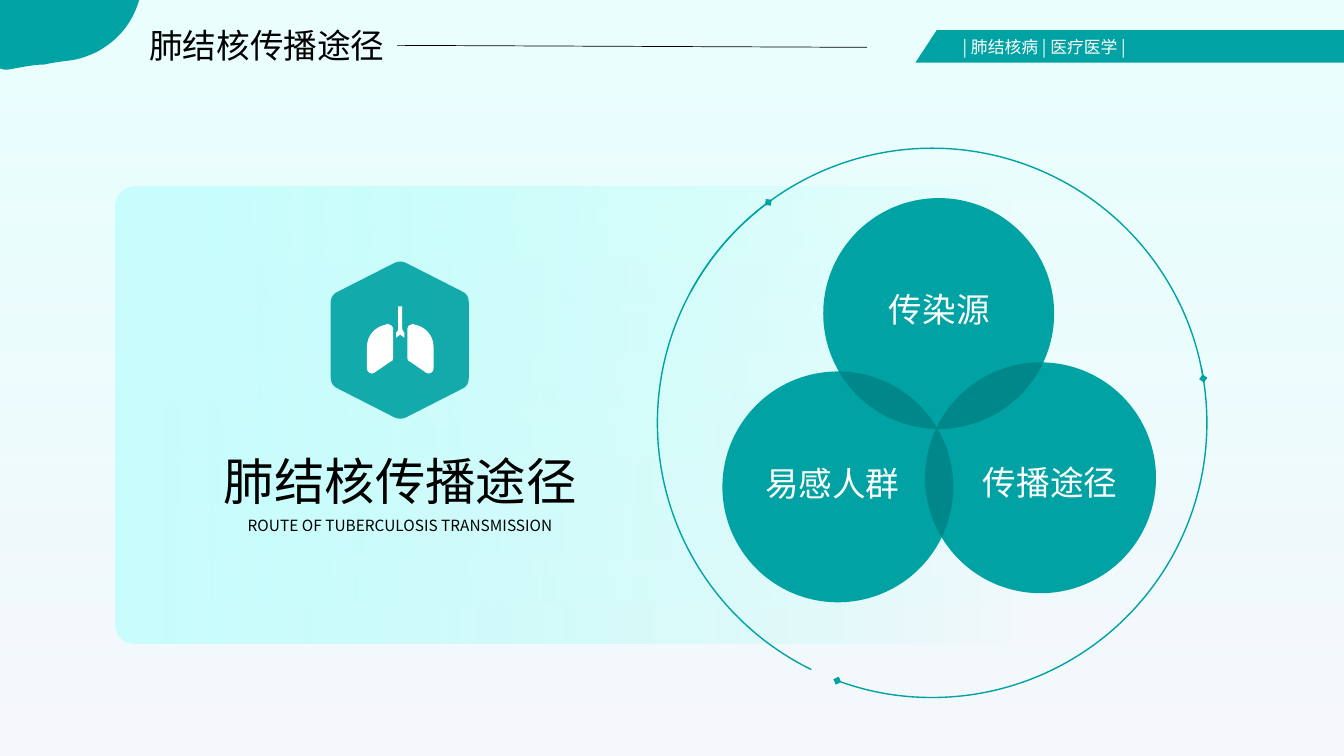
from dataclasses import dataclass
from math import acos, atan2, cos, hypot, pi, sin, tan

from lxml.etree import SubElement
from pptx import Presentation
from pptx.dml.color import RGBColor
from pptx.enum.shapes import MSO_CONNECTOR, MSO_SHAPE
from pptx.enum.text import MSO_ANCHOR, MSO_AUTO_SIZE, PP_ALIGN
from pptx.oxml.ns import qn
from pptx.util import Inches, Pt


@dataclass(frozen=True)
class Theme:
    font: str = "Noto Sans CJK SC"
    teal: str = "00A2A4"
    overlap: str = "00878A"
    black: str = "000000"
    white: str = "FFFFFF"
    page_top: str = "D9FFFF"
    page_bottom: str = "F6F8FC"
    panel_left: str = "C9FEFF"
    panel_right: str = "A3FFF4"
    heading: int = 36
    title: int = 24
    tag: int = 12
    caption: int = 11


THEME = Theme()
RADIUS = 1.145
CIRCLES = [  # label, centre, label box corner
    ("传染源", (9.31, 3.11), (8.37, 2.82)),
    ("传播途径", (10.32, 4.74), (9.47, 4.53)),
    ("易感人群", (8.31, 4.83), (7.31, 4.54)),
]
RING = (6.52, 1.47, 5.45, 5.45)
RING_ARCS = [(116.1, 233.4), (208.6, 350.7), (348.5, 110.2)]  # clockwise degrees

# Outlines: a pair is a straight step, six numbers are a Bezier step
CORNER = [(0, 0), (1.38, 0), (1.31, 0.24, 1.16, 0.41, 0.95, 0.52),
          (0.86, 0.56, 0.78, 0.59, 0.69, 0.6), (0.61, 0.61, 0.53, 0.62, 0.44, 0.64),
          (0.38, 0.64, 0.31, 0.65, 0.25, 0.66), (0.19, 0.67, 0.14, 0.68, 0.08, 0.69),
          (0.04, 0.69), (0, 0.68)]
BANNER = [(9.29, 0.3), (13.33, 0.3), (13.33, 0.62), (9.08, 0.62)]
HEXAGON = [(4.03, 2.61), (4.58, 2.89), (4.63, 2.91, 4.65, 2.95, 4.65, 3),
           (4.65, 3.75), (4.65, 3.8, 4.63, 3.84, 4.58, 3.86),
           (4.03, 4.14), (3.99, 4.16, 3.95, 4.16, 3.91, 4.14),
           (3.36, 3.86), (3.31, 3.84, 3.28, 3.8, 3.28, 3.75),
           (3.28, 3), (3.28, 2.95, 3.31, 2.91, 3.36, 2.89),
           (3.91, 2.61), (3.95, 2.59, 3.99, 2.59, 4.03, 2.61)]
RIGHT_LUNG = [(4.08, 3.22), (4.09, 3.21, 4.1, 3.21, 4.11, 3.22),
              (4.22, 3.24, 4.3, 3.33, 4.3, 3.44), (4.3, 3.66),
              (4.3, 3.69, 4.26, 3.72, 4.23, 3.7), (4.07, 3.59),
              (4.05, 3.59, 4.04, 3.57, 4.04, 3.55), (4.04, 3.26),
              (4.04, 3.24, 4.06, 3.22, 4.08, 3.22)]
LEFT_LUNG = [tuple(7.94 - v if i % 2 == 0 else v for i, v in enumerate(step))
             for step in RIGHT_LUNG]
WINDPIPE = [(3.95, 3.04), (3.99, 3.04), (3.99, 3.26),
            (3.99, 3.28, 4, 3.29, 4.01, 3.3), (4.01, 3.35), (3.97, 3.32),
            (3.93, 3.35), (3.93, 3.3), (3.94, 3.29, 3.95, 3.28, 3.95, 3.26)]


def rgb(value):
    return RGBColor.from_string(value)


def set_alpha(color_parent, percent):
    color = next(color_parent.iter(qn("a:srgbClr")))
    SubElement(color, qn("a:alpha")).set("val", str(percent * 1000))


def paint(sp, color):
    sp.shadow.inherit = False
    sp.fill.solid()
    sp.fill.fore_color.rgb = rgb(color)
    sp.line.fill.background()


def paint_gradient(sp, colors, angle, end_alpha):
    paint(sp, colors[0])
    sp.fill.gradient()
    sp.fill.gradient_angle = angle
    for stop, color in zip(sp.fill.gradient_stops, colors):
        stop.color.rgb = rgb(color)
    set_alpha(list(sp._element.iter(qn("a:gs")))[1], end_alpha)


def bend(segment, step, left, top):
    """Turn a straight segment into the Bezier step."""
    segment.tag = qn("a:cubicBezTo")
    segment.remove(segment[0])
    for x, y in zip(step[::2], step[1::2]):
        pt = SubElement(segment, qn("a:pt"))
        pt.set("x", str(Inches(x) - left))
        pt.set("y", str(Inches(y) - top))


def add_outline(s, color, *contours):
    ends = [[tuple(map(Inches, step[-2:])) for step in c] for c in contours]
    builder = s.shapes.build_freeform(*ends[0][0])
    for i, points in enumerate(ends):
        if i:
            builder.move_to(*points[0])
        builder.add_line_segments(points[1:], close=True)
    sp = builder.convert_to_shape()
    steps = [step for c in contours for step in c[1:]]
    for segment, step in zip(list(sp._element.iter(qn("a:lnTo"))), steps):
        if len(step) == 6:
            bend(segment, step, sp.left, sp.top)
    paint(sp, color)
    return sp


def write(sp, text, size, color, align=PP_ALIGN.LEFT, wrap=True):
    tf = sp.text_frame
    tf.text = text
    tf.word_wrap = wrap
    tf.auto_size = MSO_AUTO_SIZE.NONE
    tf.vertical_anchor = MSO_ANCHOR.TOP
    p = tf.paragraphs[0]
    p.alignment = align
    r = p.runs[0]
    r.font.size = Pt(size)
    r.font.name = THEME.font
    r.font.color.rgb = rgb(color)
    SubElement(r.font._element, qn("a:ea")).set("typeface", THEME.font)


def add_text(s, box, *args, **kwargs):
    write(s.shapes.add_textbox(*map(Inches, box)), *args, **kwargs)


def add_ring_arc(s, start, end):
    sp = s.shapes.add_shape(MSO_SHAPE.ARC, *map(Inches, RING))
    sp.shadow.inherit = False
    sp.adjustments[0] = start * 0.6  # 60000 units a degree, scaled by 100000
    sp.adjustments[1] = end * 0.6
    sp.fill.background()
    sp.line.color.rgb = rgb(THEME.teal)
    sp.line.width = Pt(1)
    SubElement(sp.line._get_or_add_ln(), qn("a:tailEnd")).set("type", "diamond")


def arc_step(centre, start, sweep):
    """Bezier step along a circle of the diagram."""
    (x, y), k, end = centre, 4 / 3 * tan(sweep / 4), start + sweep
    units = ((cos(start) - k * sin(start), sin(start) + k * cos(start)),
             (cos(end) + k * sin(end), sin(end) - k * cos(end)),
             (cos(end), sin(end)))
    return tuple(v for u, w in units for v in (x + RADIUS * u, y + RADIUS * w))


def add_overlap(s, first, second):
    dx, dy = second[0] - first[0], second[1] - first[1]
    half = acos(hypot(dx, dy) / 2 / RADIUS)
    facing = atan2(dy, dx)
    steps = [arc_step(centre, a + offset, half)
             for centre, a in ((first, facing), (second, facing + pi))
             for offset in (-half, 0)]
    add_outline(s, THEME.overlap, [steps[-1][-2:], *steps])


def add_page_colour(prs, s):
    page = s.shapes.add_shape(MSO_SHAPE.RECTANGLE, 0, 0, prs.slide_width, prs.slide_height)
    paint_gradient(page, (THEME.page_bottom, THEME.page_top), 90, 50)
    s.shapes._spTree.insert(2, page._element)  # behind the title


def add_header(s):
    add_outline(s, THEME.teal, CORNER)
    title = s.shapes.title
    title.left, title.top, title.width, title.height = map(Inches, (1.38, 0.2, 2.56, 0.5))
    write(title, "肺结核传播途径", THEME.title, THEME.black, wrap=False)
    rule = s.shapes.add_connector(MSO_CONNECTOR.STRAIGHT,
                                  *map(Inches, (3.94, 0.45, 8.6, 0.47)))
    rule.line.color.rgb = rgb(THEME.black)
    rule.line.width = Pt(0.5)
    SubElement(rule._element.spPr, qn("a:effectLst"))
    add_outline(s, THEME.teal, BANNER)
    add_text(s, (9.45, 0.32, 3.7, 0.3), "| 肺结核病 | 医疗医学 |", THEME.tag, THEME.white)


def add_panel(s):
    panel = s.shapes.add_shape(MSO_SHAPE.ROUNDED_RECTANGLE,
                               *map(Inches, (1.15, 1.85, 8.93, 4.53)))
    panel.adjustments[0] = 0.04
    paint_gradient(panel, (THEME.panel_left, THEME.panel_right), 0, 0)


def add_topic(s):
    hexagon = add_outline(s, THEME.teal, HEXAGON)
    set_alpha(hexagon._element.spPr, 90)
    add_outline(s, THEME.white, RIGHT_LUNG, LEFT_LUNG, WINDPIPE)
    add_text(s, (2.1, 4.42, 3.74, 0.71), "肺结核传播途径", THEME.heading,
             THEME.black, PP_ALIGN.CENTER, wrap=False)
    add_text(s, (1.97, 5.07, 4, 0.29), "ROUTE OF TUBERCULOSIS TRANSMISSION",
             THEME.caption, THEME.black, PP_ALIGN.CENTER)


def add_venn(s):
    for start, end in RING_ARCS:
        add_ring_arc(s, start, end)
    for _, (x, y), _ in CIRCLES:
        box = (x - RADIUS, y - RADIUS, 2 * RADIUS, 2 * RADIUS)
        paint(s.shapes.add_shape(MSO_SHAPE.OVAL, *map(Inches, box)), THEME.teal)
    for i, circle in enumerate(CIRCLES):
        add_overlap(s, circle[1], CIRCLES[i - 1][1])
    for label, _, corner in CIRCLES:
        add_text(s, (*corner, 1.89, 0.5), label, THEME.title, THEME.white, PP_ALIGN.CENTER)


def main():
    prs = Presentation()
    prs.slide_width, prs.slide_height = Inches(13.33), Inches(7.5)
    s = prs.slides.add_slide(prs.slide_layouts[5])
    add_page_colour(prs, s)
    add_panel(s)
    add_header(s)
    add_topic(s)
    add_venn(s)
    prs.save("out.pptx")


if __name__ == "__main__":
    main()
